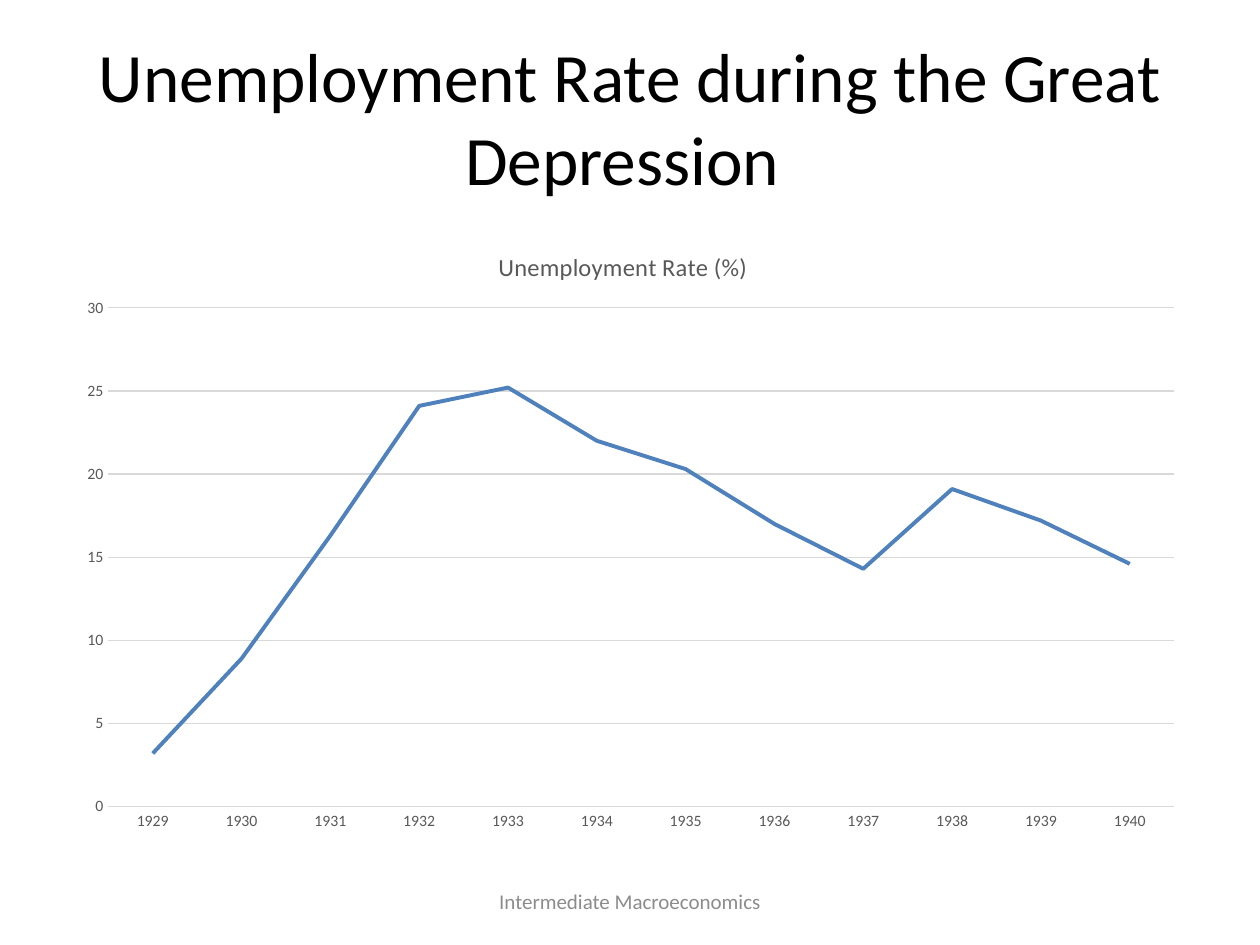
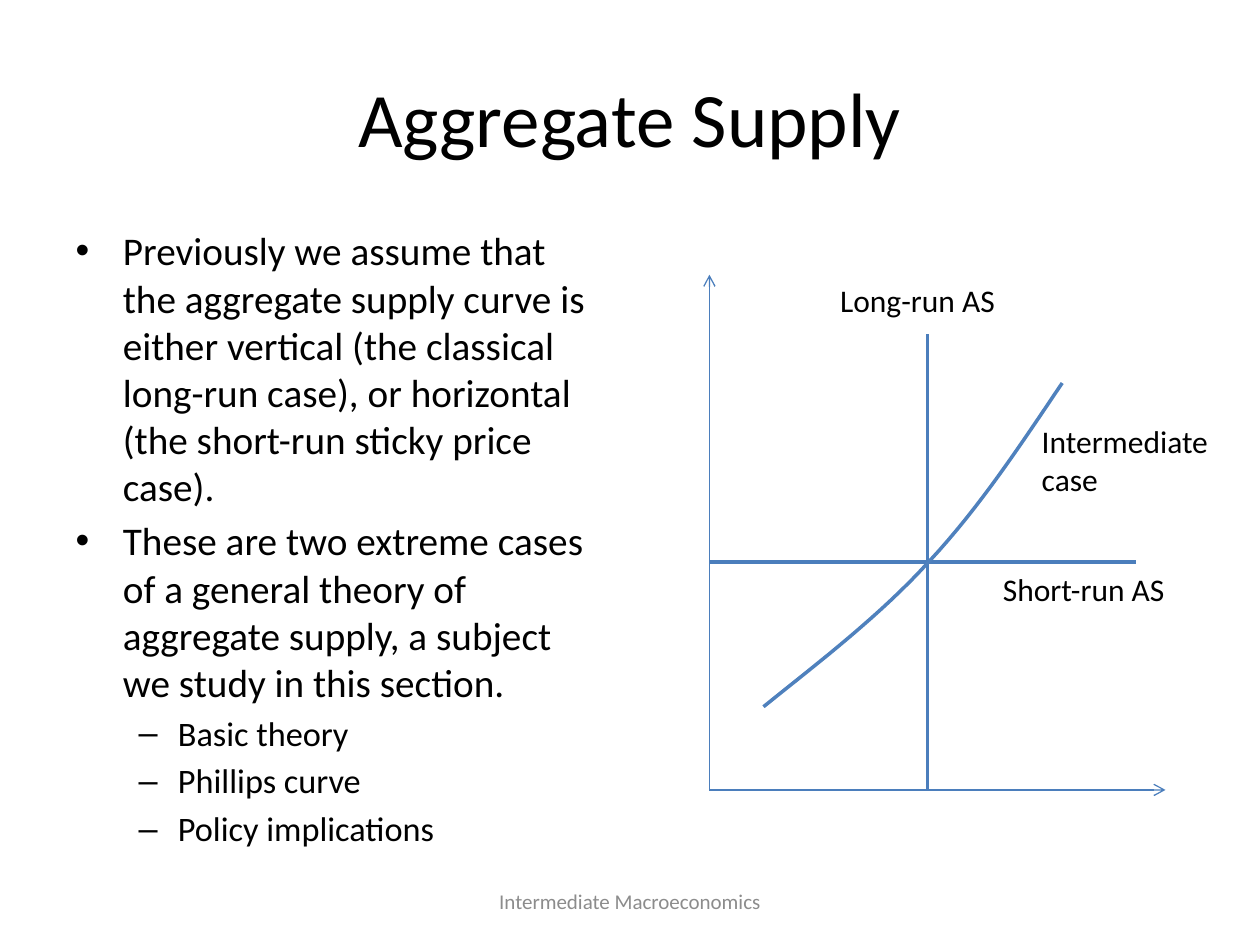
from lxml.etree import SubElement
from pptx import Presentation
from pptx.chart.data import CategoryChartData
from pptx.dml.color import RGBColor
from pptx.enum.chart import XL_CHART_TYPE, XL_TICK_MARK
from pptx.enum.shapes import MSO_CONNECTOR
from pptx.enum.text import MSO_ANCHOR, MSO_AUTO_SIZE, PP_ALIGN
from pptx.oxml.ns import qn
from pptx.util import Pt

# Shared look
FACE = "Calibri"
BLACK, GREY, SLATE = "000000", "8C8C8C", "595959"
RULE, BLUE, AXIS = "D9D9D9", "4F81BD", "4B7EBC"
FOOT = "Intermediate Macroeconomics"


def paint(form, tint):
    """Give a font, fill or line its solid colour."""
    if hasattr(form, "solid"):
        form.solid()
        form.fore_color.rgb = RGBColor.from_string(tint)
    else:
        form.color.rgb = RGBColor.from_string(tint)


def dress(item, **looks):
    """Set each named format value on an item."""
    for key, value in looks.items():
        setattr(item, key, value)


deck = Presentation()
dress(deck, slide_width=Pt(720), slide_height=Pt(540))

# Slides and titles
pages = []
for kind, head, size in [
    (5, "Unemployment Rate during the Great Depression ", 39.6),
    (1, "Aggregate Supply", 44),
]:
    page = deck.slides.add_slide(deck.slide_layouts[kind])
    title = page.shapes.title
    dress(title, left=Pt(36), top=Pt(21.6), width=Pt(648), height=Pt(90))
    frame = title.text_frame
    frame.text = head
    dress(frame, auto_size=MSO_AUTO_SIZE.NONE, word_wrap=True,
          vertical_anchor=MSO_ANCHOR.MIDDLE)
    dress(frame.paragraphs[0], alignment=PP_ALIGN.CENTER)
    font = frame.paragraphs[0].runs[0].font
    dress(font, name=FACE, size=Pt(size))
    paint(font, BLACK)
    pages.append(page)
slump, supply = pages

# Unemployment chart
data = CategoryChartData()
data.categories = [str(year) for year in range(1929, 1941)]
data.add_series("Series 1", [3.2, 8.9, 16.3, 24.1, 25.2, 22,
                             20.3, 17, 14.3, 19.1, 17.2, 14.6])
chart = slump.shapes.add_chart(XL_CHART_TYPE.LINE, Pt(36), Pt(126),
                               Pt(648), Pt(356.4), data).chart
dress(chart, has_legend=False, has_title=True)
dress(chart.font, name=FACE, size=Pt(10))
paint(chart.font, BLACK)

name = chart.chart_title.text_frame
name.text = "Unemployment Rate (%)"
font = name.paragraphs[0].runs[0].font
dress(font, name=FACE, size=Pt(14), bold=False)
paint(font, SLATE)

years, rates = chart.category_axis, chart.value_axis
for axis in (years, rates):
    dress(axis, major_tick_mark=XL_TICK_MARK.NONE,
          minor_tick_mark=XL_TICK_MARK.NONE)
    font = axis.tick_labels.font
    dress(font, name=FACE, size=Pt(9))
    paint(font, SLATE)
dress(rates, minimum_scale=0, maximum_scale=30, major_unit=5,
      has_major_gridlines=True)
rates.format.line.fill.background()
for line in (years.format.line, rates.major_gridlines.format.line):
    dress(line, width=Pt(0.75))
    paint(line, RULE)

plot = chart.plots[0]
dress(plot, vary_by_categories=False)
curve = plot.series[0]
dress(curve, smooth=False)
dress(curve.format.line, width=Pt(2.25))
paint(curve.format.line, BLUE)

# Fixed places for the plot area and the chart title
root = chart.element if hasattr(chart, "element") else chart._chartSpace
for tag, spot, place in [
    ("c:plotArea", 0, dict(layoutTarget="inner", xMode="edge", yMode="edge",
                           x=0.04, y=0.14, w=0.94, h=0.8)),
    ("c:title", 1, dict(xMode="edge", yMode="edge", x=0.38, y=0.04)),
]:
    part = root.find(".//" + qn(tag))
    for old in part.findall(qn("c:layout")):
        part.remove(old)
    box = SubElement(part, qn("c:layout"))
    part.insert(spot, box)
    hand = SubElement(box, qn("c:manualLayout"))
    for key, value in place.items():
        SubElement(hand, qn("c:" + key), val=str(value))

# Supply text
body = supply.placeholders[1]
dress(body, left=Pt(36), top=Pt(126), width=Pt(318), height=Pt(356.4))
frame = body.text_frame
dress(frame, auto_size=MSO_AUTO_SIZE.NONE, word_wrap=True)
points = [
    (0, "Previously we assume that the aggregate supply curve is either "
        "vertical (the classical long-run case), or horizontal "
        "(the short-run sticky price case)."),
    (0, "These are two extreme cases of a general theory of aggregate "
        "supply, a subject we study in this section."),
    (1, "Basic theory"),
    (1, "Phillips curve"),
    (1, "Policy implications"),
]
frame.text = "\n".join(text for _, text in points)
for para, (level, _) in zip(frame.paragraphs, points):
    dress(para, level=level)
    font = para.runs[0].font
    dress(font, name=FACE, size=Pt((22.4, 19.6)[level]))
    paint(font, BLACK)

# Axes, then the two extreme supply lines
left, base = 405.4, 451.4
cross, price = 530, 321.1
for x1, y1, x2, y2, wide, arrow in [
    (left, base, 666, base, 0.75, True),
    (left, base, left, 157, 0.75, True),
    (cross, base, cross, 190.8, 2, False),
    (left, price, 649.4, price, 2, False),
]:
    link = supply.shapes.add_connector(MSO_CONNECTOR.STRAIGHT,
                                       Pt(x1), Pt(y1), Pt(x2), Pt(y2))
    dress(link.line, width=Pt(wide))
    paint(link.line, AXIS)
    props = link._element.spPr
    if arrow:
        SubElement(props.find(qn("a:ln")), qn("a:tailEnd"), type="arrow")
    SubElement(props, qn("a:effectLst"))

# Intermediate curve, traced along two cubic arcs
arcs = [
    [(436.3, 403.9), (469.4, 377.3), (503.3, 351.4), (531.4, 320.4)],
    [(531.4, 320.4), (560.2, 289.4), (583.2, 254.2), (607, 218.9)],
]
steps = 16
trace = []
for arc in arcs:
    for step in range(1, steps + 1):
        t = step / steps
        mix = [(1 - t) ** 3, 3 * t * (1 - t) ** 2, 3 * t * t * (1 - t), t ** 3]
        trace.append([Pt(sum(m * p[i] for m, p in zip(mix, arc)))
                      for i in (0, 1)])
start = arcs[0][0]
pen = supply.shapes.build_freeform(Pt(start[0]), Pt(start[1]))
pen.add_line_segments(trace, close=False)
bend = pen.convert_to_shape()
bend.fill.background()
dress(bend.shadow, inherit=False)
dress(bend.line, width=Pt(2))
paint(bend.line, BLUE)

# Footers and curve labels
foot = (246, 500.4, 228, 28.8, FOOT, 12, GREY, PP_ALIGN.CENTER,
        MSO_ANCHOR.MIDDLE)
plain = (18, BLACK, PP_ALIGN.LEFT, MSO_ANCHOR.TOP)
for page, (x, y, w, h, text, size, tint, side, hold) in [
    (slump, foot),
    (supply, foot),
    (supply, (473, 157, 134, 29, "Long-run AS", *plain)),
    (supply, (566, 322, 130, 29, "Short-run AS", *plain)),
    (supply, (588.2, 237.6, 121.7, 51, "Intermediate case", *plain)),
]:
    frame = page.shapes.add_textbox(Pt(x), Pt(y), Pt(w), Pt(h)).text_frame
    frame.text = text
    dress(frame, word_wrap=True, vertical_anchor=hold)
    dress(frame.paragraphs[0], alignment=side)
    font = frame.paragraphs[0].runs[0].font
    dress(font, name=FACE, size=Pt(size))
    paint(font, tint)

deck.save("out.pptx")
